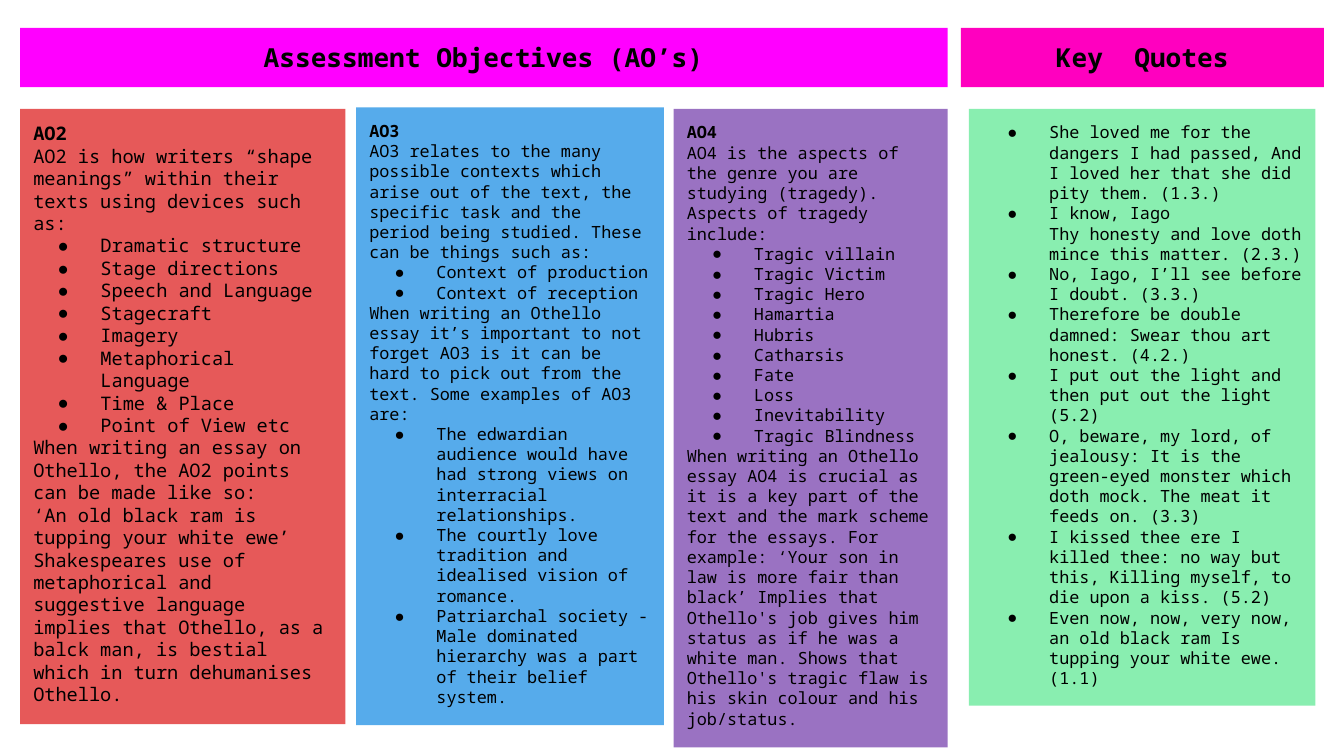
import pptx
import pptx.util
import pptx.dml.color
import pptx.enum.shapes
import pptx.enum.text
import lxml.etree

Cm = pptx.util.Cm
COLORS = {
    "text": "000000",
    "objectives": "FF00FF",
    "quotes_title": "FF00BF",
    "ao2": "E65959",
    "ao3": "56ABEB",
    "ao4": "9A72C2",
    "quotes": "89EEB0",
}


def add_panel(color, left, top, width, height):
    sp = s.shapes.add_shape(pptx.enum.shapes.MSO_SHAPE.RECTANGLE,
                            Cm(left), Cm(top), Cm(width), Cm(height))
    sp.shadow.inherit = False
    sp.fill.solid()
    sp.fill.fore_color.rgb = pptx.dml.color.RGBColor.from_string(COLORS[color])
    sp.line.fill.background()
    tf = sp.text_frame
    tf.word_wrap = True
    tf.auto_size = pptx.enum.text.MSO_AUTO_SIZE.SHAPE_TO_FIT_TEXT
    tf.vertical_anchor = pptx.enum.text.MSO_ANCHOR.TOP
    tf.margin_left = tf.margin_top = tf.margin_right = tf.margin_bottom = Cm(0.25)
    return tf


def add_text(p, text, size, bold, align):
    p.alignment = align
    r = p.add_run()
    r.text = text
    r.font.size = pptx.util.Pt(size)
    r.font.name = "Noto Sans Mono"
    r.font.bold = bold
    r.font.color.rgb = pptx.dml.color.RGBColor.from_string(COLORS["text"])


prs = pptx.Presentation()
prs.slide_width = Cm(25.4)
prs.slide_height = Cm(14.29)
s = prs.slides.add_slide(prs.slide_layouts[6])

titles = [
    ("objectives", 0.38, 17.53, "Assessment Objectives (AO’s)"),
    ("quotes_title", 18.16, 6.86, "Key  Quotes"),
]
for color, left, width, text in titles:
    tf = add_panel(color, left, 0.53, width, 1.12)
    add_text(tf.paragraphs[0], text, 14, True, pptx.enum.text.PP_ALIGN.CENTER)

panels = [
    ("ao2", (0.38, 2.06, 6.15, 11.63), 10, 0.81, [
        ("head", "AO2"),
        ("body", "AO2 is how writers “shape meanings” within their texts using devices such as:"),
        ("bullet", "Dramatic structure"),
        ("bullet", "Stage directions"),
        ("bullet", "Speech and Language"),
        ("bullet", "Stagecraft"),
        ("bullet", "Imagery"),
        ("bullet", "Metaphorical Language"),
        ("bullet", "Time & Place"),
        ("bullet", "Point of View etc"),
        ("body", "When writing an essay on Othello, the AO2 points can be made like so:"),
        ("body", "‘An old black ram is tupping your white ewe’ Shakespeares use of "
                 "metaphorical and suggestive language implies that Othello, as a balck "
                 "man, is bestial which in turn dehumanises Othello."),
    ]),
    ("ao3", (6.73, 2.03, 5.82, 11.68), 9, 0.79, [
        ("head", "AO3"),
        ("body", "AO3 relates to the many possible contexts which arise out of the text, "
                 "the specific task and the period being studied. These can be things such as:"),
        ("bullet", "Context of production"),
        ("bullet", "Context of reception"),
        ("body", "When writing an Othello essay it’s important to not forget AO3 is it can "
                 "be hard to pick out from the text. Some examples of AO3 are:"),
        ("bullet", "The edwardian audience would have had strong views on interracial relationships."),
        ("bullet", "The courtly love tradition and idealised vision of romance."),
        ("bullet", "Patriarchal society - Male dominated hierarchy was a part of their belief system."),
    ]),
    ("ao4", (12.73, 2.06, 5.18, 12.07), 9, 0.79, [
        ("head", "AO4"),
        ("body", "AO4 is the aspects of the genre you are studying (tragedy). "
                 "Aspects of tragedy include:"),
        ("bullet", "Tragic villain"),
        ("bullet", "Tragic Victim"),
        ("bullet", "Tragic Hero"),
        ("bullet", "Hamartia"),
        ("bullet", "Hubris"),
        ("bullet", "Catharsis"),
        ("bullet", "Fate"),
        ("bullet", "Loss"),
        ("bullet", "Inevitability"),
        ("bullet", "Tragic Blindness"),
        ("body", "When writing an Othello essay AO4 is crucial as it is a key part of the "
                 "text and the mark scheme for the essays. For example: ‘Your son in law is "
                 "more fair than black’ Implies that Othello's job gives him status as if he "
                 "was a white man. Shows that Othello's tragic flaw is his skin colour and "
                 "his job/status."),
    ]),
    ("quotes", (18.31, 2.06, 6.55, 11.28), 9, 0.79, [
        ("bullet", "She loved me for the dangers I had passed, And I loved her that she did "
                   "pity them. (1.3.)"),
        ("bullet", "I know, Iago"),
        ("indent", "Thy honesty and love doth mince this matter. (2.3.)"),
        ("bullet", "No, Iago, I’ll see before I doubt. (3.3.)"),
        ("bullet", "Therefore be double damned: Swear thou art honest. (4.2.)"),
        ("bullet", "I put out the light and then put out the light (5.2)"),
        ("bullet", "O, beware, my lord, of jealousy: It is the green-eyed monster which doth "
                   "mock. The meat it feeds on. (3.3)"),
        ("bullet", "I kissed thee ere I killed thee: no way but this, Killing myself, to die "
                   "upon a kiss. (5.2)"),
        ("bullet", "Even now, now, very now, an old black ram Is tupping your white ewe. (1.1)"),
    ]),
]
ns = "{http://schemas.openxmlformats.org/drawingml/2006/main}"
for color, box, size, hang, lines in panels:
    tf = add_panel(color, *box)
    for i, (kind, text) in enumerate(lines):
        p = tf.add_paragraph() if i else tf.paragraphs[0]
        add_text(p, text, size, kind == "head", pptx.enum.text.PP_ALIGN.LEFT)
        if kind in ("bullet", "indent"):
            pPr = p._p.get_or_add_pPr()
            pPr.set("marL", str(Cm(1.27)))
            pPr.set("indent", str(-Cm(hang) if kind == "bullet" else 0))
        if kind == "bullet":
            clr = lxml.etree.SubElement(pPr, ns + "buClr")
            lxml.etree.SubElement(clr, ns + "srgbClr", val=COLORS["text"])
            lxml.etree.SubElement(pPr, ns + "buFont", typeface="Noto Sans Mono")
            lxml.etree.SubElement(pPr, ns + "buChar", char="●")

prs.save("out.pptx")
